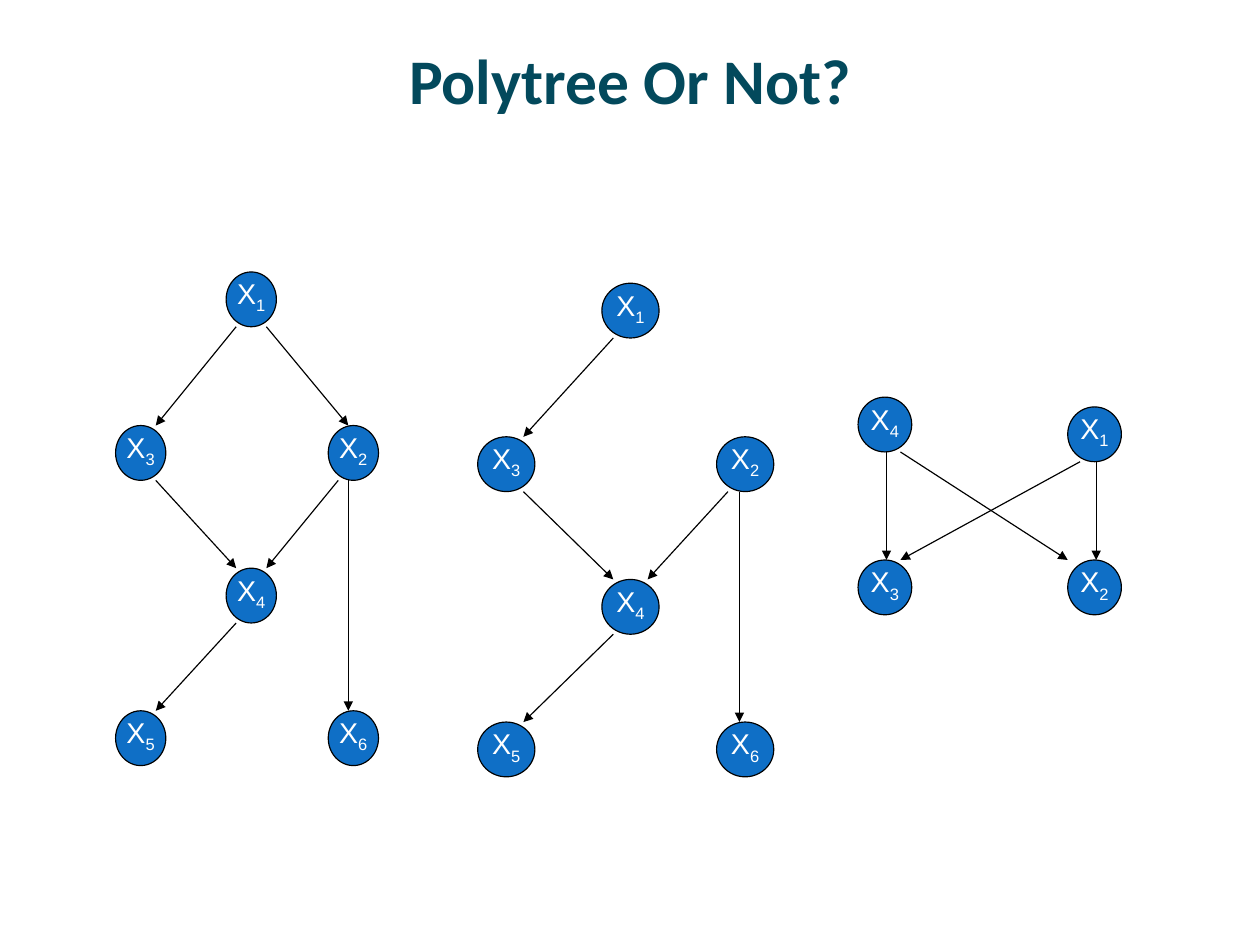
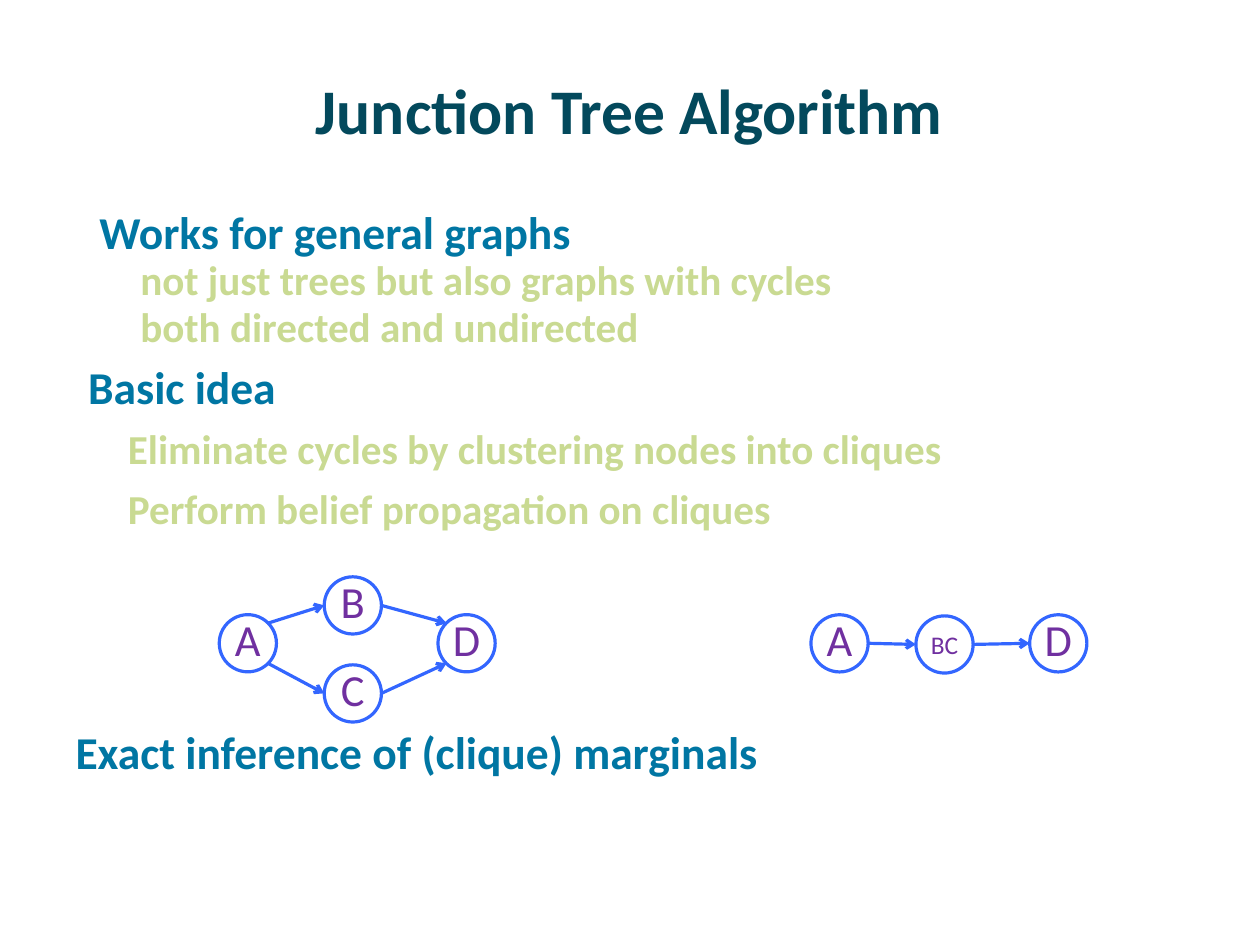
from dataclasses import dataclass

import pptx
import pptx.dml.color
import pptx.enum.shapes
import pptx.enum.text
import pptx.oxml
import pptx.oxml.ns
import pptx.util

Pt = pptx.util.Pt
ALIGN = pptx.enum.text.PP_ALIGN
ANCHOR = pptx.enum.text.MSO_ANCHOR
WIDTH, HEIGHT = pptx.util.Cm(28), pptx.util.Cm(21)


@dataclass(frozen=True)
class NodeStyle:
    fill: str
    line: str
    line_width: float
    text: str
    font: str
    arrowhead: str
    insets: tuple  # left, top, right, bottom in points
    wrap: bool


@dataclass(frozen=True)
class Theme:
    font: str = "Calibri"
    title: str = "03495C"
    point: str = "0076A3"
    detail: str = "C9DA92"
    title_size: float = 40
    point_size: float = 28.7
    detail_size: float = 25.9
    node_size: float = 18
    letter_size: float = 28
    clique_size: float = 16
    body_spacing: float = 0.51
    node_spacing: float = 0.47
    insets: tuple = (8, 4, 8, 4)
    solid: NodeStyle = NodeStyle("0F6FC6", "000000", 0.75, "FFFFFF", "Arial",
                                 "triangle", (7.2, 3.6, 7.2, 3.6), False)
    outlined: NodeStyle = NodeStyle("FFFFFF", "3366FF", 2, "7030A0", "Calibri",
                                    "arrow", (0, 7.2, 0, 0), True)


THEME = Theme()


def rgb(value):
    return pptx.dml.color.RGBColor.from_string(value)


def on_slide(*shares):
    """Turn percentages of the slide (x, y, x, y) into lengths."""
    return [round(share * side / 100) for share, side in zip(shares, (WIDTH, HEIGHT) * 2)]


def write(paragraph, text, *, size, color, font=THEME.font, bold=False, subscript=False):
    run = paragraph.add_run()
    run.text = text
    run.font.size, run.font.name, run.font.bold = Pt(size), font, bold
    run.font.color.rgb = rgb(color)
    if subscript:
        run.font._element.set("baseline", "-25000")


def set_frame(frame, insets, anchor, wrap=True):
    frame.auto_size = pptx.enum.text.MSO_AUTO_SIZE.NONE
    frame.word_wrap, frame.vertical_anchor = wrap, anchor
    (frame.margin_left, frame.margin_top,
     frame.margin_right, frame.margin_bottom) = map(Pt, insets)


def place(placeholder, box, anchor):
    placeholder.left, placeholder.top, placeholder.width, placeholder.height = on_slide(*box)
    set_frame(placeholder.text_frame, THEME.insets, anchor)
    return placeholder.text_frame


# Title and list regions
def add_title(slide, box, text, spacing=1.0):
    heading = place(slide.shapes.title, box, ANCHOR.MIDDLE).paragraphs[0]
    heading.alignment, heading.line_spacing = ALIGN.CENTER, spacing
    write(heading, text, size=THEME.title_size, color=THEME.title, bold=True)


def add_list(slide, box, items):
    """Each item is (level, left margin, space before, text)."""
    frame = place(slide.placeholders[1], box, ANCHOR.TOP)
    for index, (level, margin, before, text) in enumerate(items):
        item = frame.add_paragraph() if index else frame.paragraphs[0]
        item.level, item.alignment = level, ALIGN.LEFT
        item.line_spacing, item.space_before = THEME.body_spacing, Pt(before)
        item.space_after = Pt(0)
        properties = item._p.get_or_add_pPr()
        properties.set("marL", str(Pt(margin)))
        properties.set("indent", "0")
        properties.append(properties.makeelement(pptx.oxml.ns.qn("a:buNone"), {}))
        size, color = ((THEME.detail_size, THEME.detail) if level
                       else (THEME.point_size, THEME.point))
        write(item, text, size=size, color=color, bold=True)


# Graph parts
def add_node(shapes, label, box, style, size):
    node = shapes.add_shape(pptx.enum.shapes.MSO_SHAPE.OVAL, *box)
    node.shadow.inherit = False
    node.fill.solid()
    node.fill.fore_color.rgb = rgb(style.fill)
    node.line.color.rgb, node.line.width = rgb(style.line), Pt(style.line_width)
    set_frame(node.text_frame, style.insets, ANCHOR.MIDDLE, style.wrap)
    caption = node.text_frame.paragraphs[0]
    caption.alignment, caption.line_spacing = ALIGN.CENTER, THEME.node_spacing
    name, _, number = label.partition("_")
    write(caption, name, size=size, color=style.text, font=style.font)
    if number:
        write(caption, number, size=size, color=style.text, font=style.font, subscript=True)
    return node


def port(node, share):
    """Point at a share of the node's width and height."""
    return (round(node.left + share[0] * node.width),
            round(node.top + share[1] * node.height))


def add_arrow(shapes, start, end, style):
    arrow = shapes.add_connector(pptx.enum.shapes.MSO_CONNECTOR.STRAIGHT, *start, *end)
    arrow.line.color.rgb, arrow.line.width = rgb(style.line), Pt(style.line_width)
    outline = arrow.line._get_or_add_ln()
    outline.append(outline.makeelement(pptx.oxml.ns.qn("a:tailEnd"), {"type": style.arrowhead}))
    properties = arrow._element.spPr
    properties.append(properties.makeelement(pptx.oxml.ns.qn("a:effectLst"), {}))


def add_graph(slide, box, node_size, nodes, arrows, style):
    """Nodes: label -> (column, row, type size), as shares of the free room in the box.
    Arrows: (source, port, target, port)."""
    left, top, width, height = on_slide(*box)
    node_width, node_height = on_slide(*node_size)
    shapes = slide.shapes.add_group_shape().shapes
    placed = {}
    for label, (column, row, size) in nodes.items():
        corner = (round(left + column * (width - node_width)),
                  round(top + row * (height - node_height)))
        placed[label] = add_node(shapes, label, (*corner, node_width, node_height), style, size)
    for source, leaving, target, entering in arrows:
        add_arrow(shapes, port(placed[source], leaving), port(placed[target], entering), style)


def downward(*arrows):
    """Arrows from the lower edge of one node to the upper edge of another."""
    return [(source, (leaving, 1), target, (entering, 0))
            for source, leaving, target, entering in arrows]


def polytree_slide(deck):
    slide = deck.slides.add_slide(deck.slide_layouts[5])
    add_title(slide, (4.99, 2.25, 90.02, 12.21), "Polytree Or Not?")

    # Six-node graphs: the second lacks the arrow from X1 to X2
    size = THEME.node_size
    upper = 0.35
    lower = (upper + 1) / 2
    six_nodes = {"X_1": (0.52, 0, size), "X_5": (0, 1, size), "X_2": (1, upper, size),
                 "X_4": (0.52, lower, size), "X_3": (0, upper, size), "X_6": (1, 1, size)}
    tree_arrows = downward(("X_1", 0.2, "X_3", 0.8), ("X_3", 0.8, "X_4", 0.2),
                           ("X_2", 0.2, "X_4", 0.8), ("X_4", 0.2, "X_5", 0.8),
                           ("X_2", 0.4, "X_6", 0.4))
    cycle_arrow = downward(("X_1", 0.8, "X_2", 0.4))
    add_graph(slide, (9.17, 28.78, 20.87, 52.24), (3.99, 5.8),
              six_nodes, tree_arrows + cycle_arrow, THEME.solid)
    add_graph(slide, (37.91, 29.97, 23.5, 52.24), (4.54, 5.8),
              six_nodes, tree_arrows, THEME.solid)

    # Two parents, two shared children
    crossing = {"X_1": (1, 0.06, size), "X_2": (1, 1, size),
                "X_3": (0, 1, size), "X_4": (0, 0, size)}
    add_graph(slide, (68.1, 42.03, 20.9, 23.03), (4.26, 5.8), crossing,
              downward(("X_4", 0.53, "X_3", 0.53), ("X_1", 0.23, "X_3", 0.79),
                       ("X_1", 0.53, "X_2", 0.53), ("X_4", 0.79, "X_2", 0)),
              THEME.solid)


def junction_slide(deck):
    slide = deck.slides.add_slide(deck.slide_layouts[1])
    add_title(slide, (4.99, 4.55, 89.93, 15.48), "Junction Tree Algorithm", spacing=0.81)
    add_list(slide, (4.99, 23.34, 89.93, 64.81), [
        (0, 15, 22, "Works for general graphs"),
        (1, 40.8, 13.2, "not just trees but also graphs with cycles"),
        (1, 40.8, 13.2, "both directed and undirected"),
        (0, 8, 22, "Basic idea"),
        (1, 33, 22, "Eliminate cycles by clustering nodes into cliques"),
        (1, 33, 22, "Perform belief propagation on cliques"),
        (0, 0, 137.2, "Exact inference of (clique) marginals"),
    ])

    # Graph with a cycle, then its chain of cliques
    west, east = (0, 0.5), (1, 0.5)
    circle = (4.54, 6.05)
    letter, clique = THEME.letter_size, THEME.clique_size
    add_graph(slide, (17.4, 61.04, 21.9, 15.36), circle,
              {"A": (0, 0.43, letter), "D": (1, 0.43, letter),
               "B": (0.48, 0, letter), "C": (0.48, 1, letter)},
              [("A", (0.85, 0.15), "B", west), ("A", (0.85, 0.85), "C", west),
               ("B", east, "D", (0.15, 0.15)), ("C", east, "D", (0.15, 0.85))],
              THEME.outlined)
    add_graph(slide, (64.36, 65.05, 21.9, 6.17), circle,
              {"A": (0, 0, letter), "BC": (0.48, 1, clique), "D": (1, 0, letter)},
              [("A", east, "BC", west), ("BC", east, "D", west)],
              THEME.outlined)


def main():
    deck = pptx.Presentation()
    deck.slide_width, deck.slide_height = WIDTH, HEIGHT
    polytree_slide(deck)
    junction_slide(deck)
    deck.save("out.pptx")


if __name__ == "__main__":
    main()
